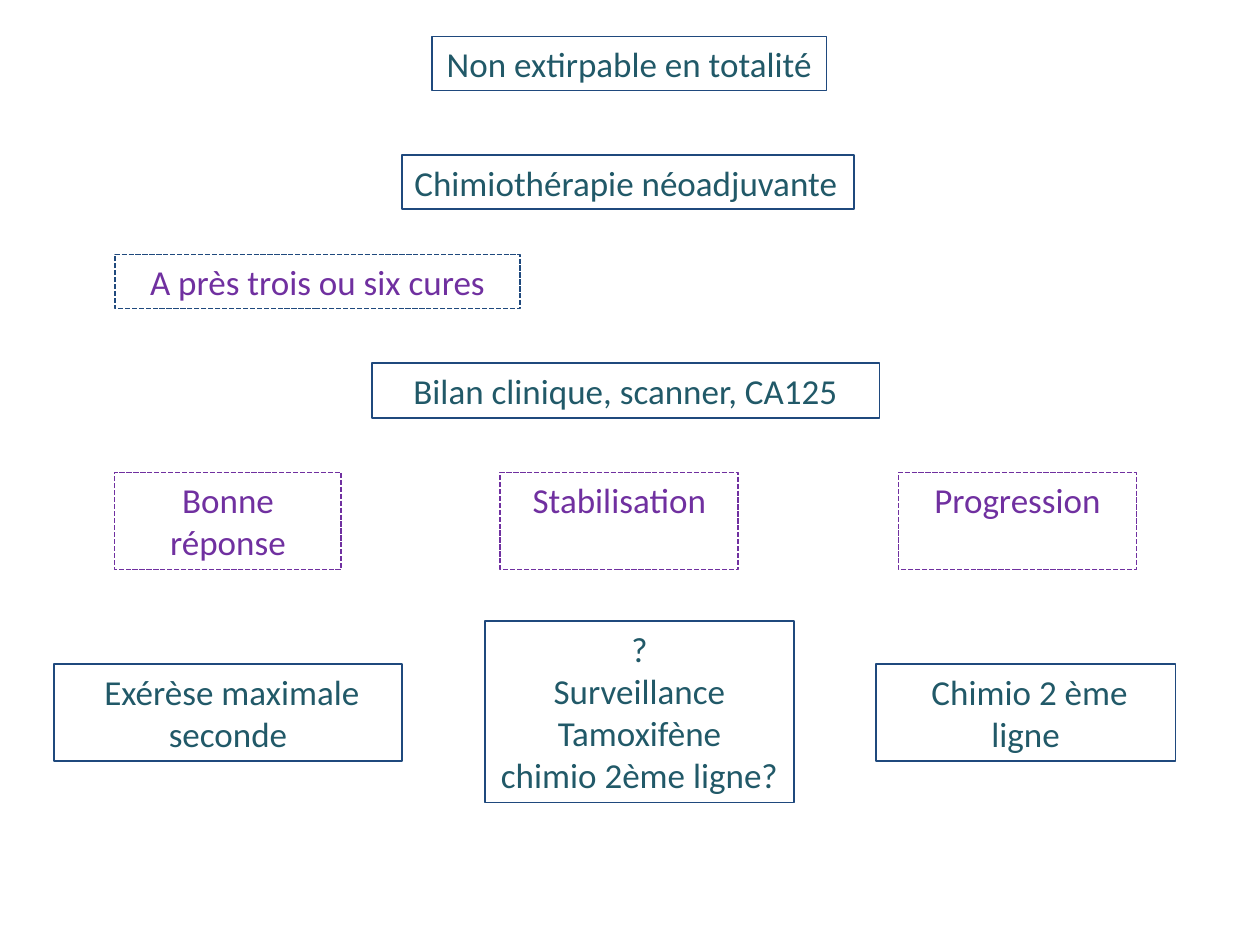
from pptx import Presentation
from pptx.dml.color import RGBColor
from pptx.enum.dml import MSO_LINE
from pptx.enum.shapes import MSO_SHAPE
from pptx.enum.text import MSO_ANCHOR, PP_ALIGN
from pptx.util import Inches, Pt

NAVY = RGBColor(0x1F, 0x49, 0x7D)
TEAL = RGBColor(0x21, 0x59, 0x68)
PURPLE = RGBColor(0x70, 0x30, 0xA0)

ONE_LINE = 0.43
TWO_LINES = 0.77
FOUR_LINES = 1.44
RESPONSE_TOP = 3.75
TREATMENT_TOP = 5.27


class DecisionTree:
    font_name = "Calibri"
    font_size = Pt(20)
    border_width = Pt(1)

    def __init__(self, slide):
        self.slide = slide

    def box(self, text, left, top, width, height, color, border, align, wrap):
        frame = self.slide.shapes.add_shape(
            MSO_SHAPE.RECTANGLE,
            Inches(left), Inches(top), Inches(width), Inches(height),
        )
        frame.shadow.inherit = False
        frame.fill.background()
        frame.line.color.rgb = border
        frame.line.width = self.border_width
        content = frame.text_frame
        content.word_wrap = wrap
        content.vertical_anchor = MSO_ANCHOR.TOP
        content.text = text
        for paragraph in content.paragraphs:
            paragraph.alignment = align
            paragraph.font.name = self.font_name
            paragraph.font.size = self.font_size
            paragraph.font.color.rgb = color
        return frame

    def step(self, text, left, top, width, height=ONE_LINE,
             align=PP_ALIGN.CENTER, wrap=True):
        return self.box(text, left, top, width, height, TEAL, NAVY, align, wrap)

    def condition(self, text, left, top, width, height=TWO_LINES, border=PURPLE):
        frame = self.box(text, left, top, width, height, PURPLE, border,
                         PP_ALIGN.CENTER, True)
        frame.line.dash_style = MSO_LINE.SQUARE_DOT
        return frame


def main():
    presentation = Presentation()
    presentation.slide_width = Inches(10)
    presentation.slide_height = Inches(7.5)
    tree = DecisionTree(presentation.slides.add_slide(presentation.slide_layouts[6]))

    tree.step("Non extirpable en totalité", 3.43, 0.29, 3.13, wrap=False)
    tree.step("Chimiothérapie néoadjuvante", 3.19, 1.23, 3.59,
              align=PP_ALIGN.LEFT, wrap=False)
    tree.condition("A près trois ou six cures", 0.91, 2.02, 3.22, ONE_LINE, NAVY)
    assessment = tree.step("Bilan clinique, scanner, CA125", 2.95, 2.88, 4.03, 0.44)
    assessment.text_frame.vertical_anchor = MSO_ANCHOR.MIDDLE

    responses = [
        ("Bonne réponse", 0.91, 1.8),
        ("Stabilisation", 3.97, 1.89),
        ("Progression", 7.13, 1.89),
    ]
    for response, left, width in responses:
        tree.condition(response, left, RESPONSE_TOP, width)

    treatments = [
        (" Exérèse maximale seconde", 0.43, TREATMENT_TOP, 2.76, TWO_LINES),
        ("?\nSurveillance\nTamoxifène\nchimio 2ème ligne?",
         3.85, 4.93, 2.45, FOUR_LINES),
        (" Chimio 2 ème ligne", 6.95, TREATMENT_TOP, 2.38, TWO_LINES),
    ]
    for treatment in treatments:
        tree.step(*treatment)

    presentation.save("out.pptx")


if __name__ == "__main__":
    main()
